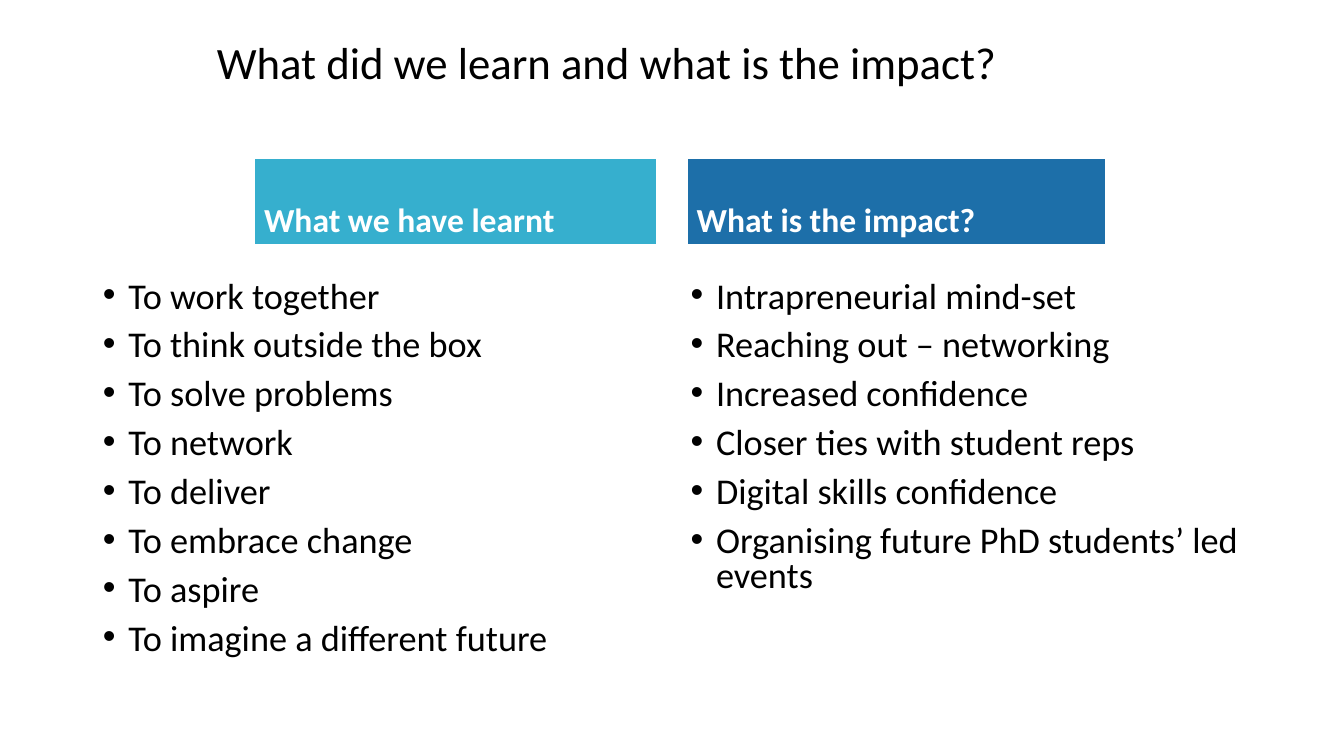
from pptx import Presentation
from pptx.dml.color import RGBColor
from pptx.enum.text import MSO_ANCHOR as Anchor, MSO_AUTO_SIZE as AutoSize, PP_ALIGN as Align
from pptx.util import Cm, Pt

COMPARISON_LAYOUT = 4
COLUMNS = [
    {
        "heading": "What we have learnt",
        "heading_box": (6.4, 3.99, 10.16, 2.18),
        "colour": "36AFCE",
        "points_box": (2.34, 6.96, 14.33, 10.24),
        "points": [
            "To work together",
            "To think outside the box",
            "To solve problems",
            "To network",
            "To deliver",
            "To embrace change",
            "To aspire",
            "To imagine a different future",
        ],
    },
    {
        "heading": "What is the impact?",
        "heading_box": (17.3, 3.99, 10.57, 2.18),
        "colour": "1D6FA9",
        "points_box": (17.15, 6.96, 14.4, 10.24),
        "points": [
            "Intrapreneurial mind-set",
            "Reaching out – networking",
            "Increased confidence",
            "Closer ties with student reps",
            "Digital skills confidence",
            "Organising future PhD students’ led events",
        ],
    },
]


def colour(hex_code):
    return RGBColor.from_string(hex_code)


def apply(target, formats):
    for name, value in formats.items():
        setattr(target, name, value)


class ComparisonSlide:
    """Fills the placeholders of a two-column comparison slide in one style."""

    font = "Calibri"
    ink = "000000"
    paper = "FFFFFF"

    def __init__(self, deck):
        self.slide = deck.slides.add_slide(deck.slide_layouts[COMPARISON_LAYOUT])

    def fill_placeholder(self, idx, box, lines, anchor, size, ink, bold, spacing, before):
        holder = self.slide.placeholders[idx]
        apply(holder, dict(zip(("left", "top", "width", "height"), map(Cm, box))))
        frame = holder.text_frame
        frame.text = "\n".join(lines)
        apply(frame, {"word_wrap": True, "auto_size": AutoSize.NONE, "vertical_anchor": anchor})
        for paragraph in frame.paragraphs:
            apply(paragraph, {"alignment": Align.LEFT, "line_spacing": spacing,
                              "space_before": Pt(before)})
            for run in paragraph.runs:
                apply(run.font, {"name": self.font, "size": Pt(size), "bold": bold})
                run.font.color.rgb = colour(ink)
        return holder

    def title(self, text, box):
        self.fill_placeholder(0, box, [text], Anchor.MIDDLE, 32, self.ink, False, 0.9, 0)

    def heading(self, idx, text, box, fill):
        band = self.fill_placeholder(idx, box, [text], Anchor.BOTTOM, 24, self.paper, True, 0.9, 10)
        band.fill.solid()
        band.fill.fore_color.rgb = colour(fill)
        band.line.color.rgb = colour(self.paper)
        band.line.width = Pt(1.5)

    def bullets(self, idx, points, box):
        body = self.fill_placeholder(idx, box, points, Anchor.TOP, 25.9, self.ink, False, 0.8, 10)
        indent = Cm(0.64)
        for paragraph in body.text_frame.paragraphs:
            properties = paragraph._p.get_or_add_pPr()
            properties.set("marL", str(indent))
            properties.set("indent", str(-indent))


def main():
    deck = Presentation()
    apply(deck, {"slide_width": Cm(33.87), "slide_height": Cm(19.05)})
    comparison = ComparisonSlide(deck)
    comparison.title("What did we learn and what is the impact?", (5.21, 0.69, 23.55, 1.88))
    for number, column in enumerate(COLUMNS):
        heading_idx = 1 + 2 * number
        comparison.heading(heading_idx, column["heading"], column["heading_box"], column["colour"])
        comparison.bullets(heading_idx + 1, column["points"], column["points_box"])
    deck.save("out.pptx")


if __name__ == "__main__":
    main()
